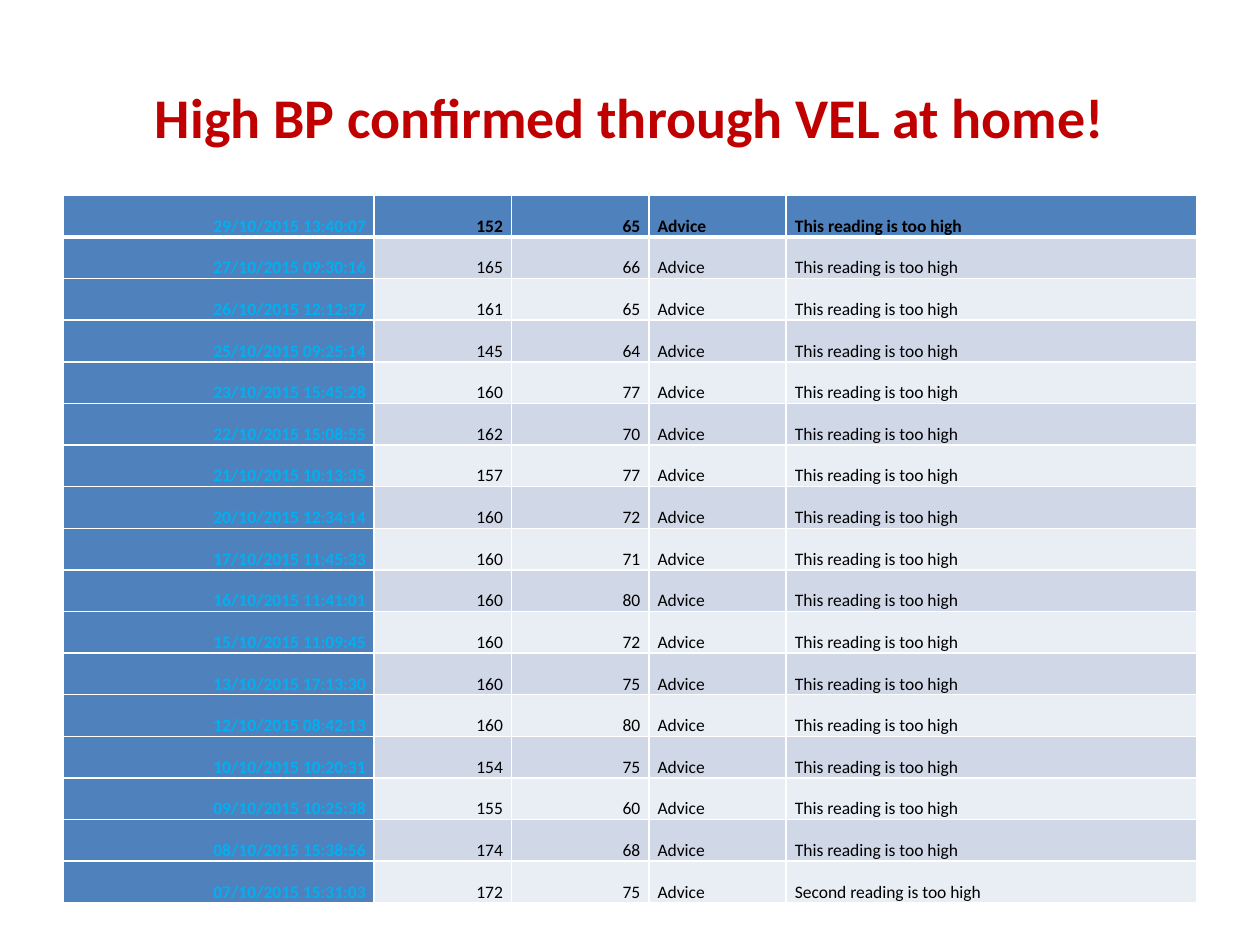
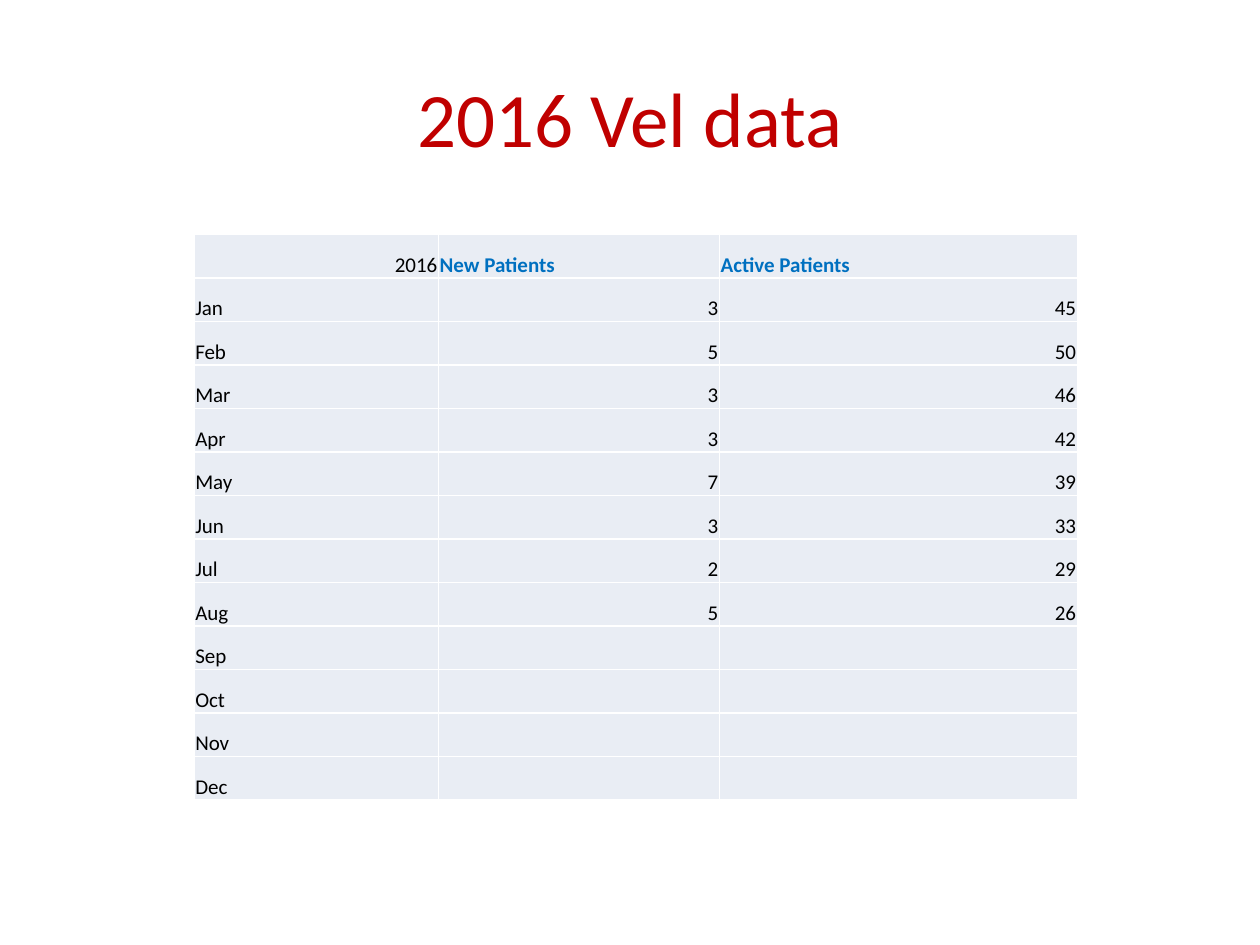
"""Build two slides of tables: home blood pressure readings and monthly patient counts."""
import pptx
import pptx.dml.color
import pptx.enum.text
import pptx.oxml.ns
import pptx.util
from lxml import etree

Pt = pptx.util.Pt
qn = pptx.oxml.ns.qn
RGB = pptx.dml.color.RGBColor.from_string
ALIGN = pptx.enum.text.PP_ALIGN
ANCHOR = pptx.enum.text.MSO_ANCHOR

THEME = {
    "font": "Calibri",
    "title": "C00000",
    "text": "000000",
    "date": "00B0F0",
    "heading": "0070C0",
    "strong": "4F81BD",
    "band": "D0D8E8",
    "pale": "E9EDF4",
    "grid": "FFFFFF",
    "thin": 1,
    "thick": 3,
}

READINGS = [
    ("29/10/2015 13:40:07", 152, 65),
    ("27/10/2015 09:30:16", 165, 66),
    ("26/10/2015 12:12:37", 161, 65),
    ("25/10/2015 09:25:14", 145, 64),
    ("23/10/2015 15:45:28", 160, 77),
    ("22/10/2015 15:08:55", 162, 70),
    ("21/10/2015 10:13:35", 157, 77),
    ("20/10/2015 12:34:14", 160, 72),
    ("17/10/2015 11:45:33", 160, 71),
    ("16/10/2015 11:41:01", 160, 80),
    ("15/10/2015 11:09:45", 160, 72),
    ("13/10/2015 17:13:30", 160, 75),
    ("12/10/2015 08:42:13", 160, 80),
    ("10/10/2015 10:20:31", 154, 75),
    ("09/10/2015 10:25:38", 155, 60),
    ("08/10/2015 15:38:56", 174, 68),
    ("07/10/2015 15:31:03", 172, 75),
]
ADVICE = ["This reading is too high"] * 16 + ["Second reading is too high"]

PATIENTS = [
    (2016, "New Patients", "Active Patients"),
    ("Jan", 3, 45),
    ("Feb", 5, 50),
    ("Mar", 3, 46),
    ("Apr", 3, 42),
    ("May", 7, 39),
    ("Jun", 3, 33),
    ("Jul", 2, 29),
    ("Aug", 5, 26),
    ("Sep", "", ""),
    ("Oct", "", ""),
    ("Nov", "", ""),
    ("Dec", "", ""),
]


def reading_look(row, column):
    """Return fill, text colour and weight for a cell of the readings table."""
    if row == 0 or column == 0:
        fill = THEME["strong"]
    else:
        fill = THEME["band"] if row % 2 else THEME["pale"]
    return fill, THEME["text" if column else "date"], row == 0 or column == 0


def patient_look(row, column):
    """Return fill, text colour and weight for a cell of the patients table."""
    heading = row == 0 and column > 0
    return THEME["pale"], THEME["heading" if heading else "text"], heading


SLIDES = [
    {
        "title": "High BP confirmed through VEL at home!",
        "title_size": 32,
        "title_bold": True,
        "rows": [(*reading, "Advice", advice) for reading, advice in zip(READINGS, ADVICE)],
        "look": reading_look,
        "origin": (36, 111.6),
        "columns": (177.8, 78.5, 78.5, 78.5, 234.7),
        "row_height": 23.8,
        "size": 10,
        "spacing": 1.15,
        "insets": (5, 0, 5, 0),
        "header_rule": THEME["thick"],
    },
    {
        "title": "2016 Vel data",
        "title_size": 44,
        "title_bold": False,
        "rows": PATIENTS,
        "look": patient_look,
        "origin": (110.9, 134),
        "columns": (139.7, 160.5, 204.5),
        "row_height": 24.87,
        "size": 12,
        "spacing": 1.0,
        "insets": (0.7, 0.7, 0.7, 0),
        "header_rule": THEME["thin"],
    },
]


def apply(target, formats):
    """Set each named format value on the target."""
    for name, value in formats.items():
        setattr(target, name, value)


def style_font(font, size, color, bold):
    """Give a font the theme face with a size, colour and weight."""
    apply(font, {"name": THEME["font"], "size": Pt(size), "bold": bold})
    font.color.rgb = RGB(color)


def add_borders(cell, widths):
    """Draw the left, right, top and bottom cell borders in the grid colour."""
    properties = cell._tc.get_or_add_tcPr()
    for place, (side, width) in enumerate(zip("LRTB", widths)):
        line = etree.Element(qn(f"a:ln{side}"), w=str(int(Pt(width))))
        fill = etree.SubElement(line, qn("a:solidFill"))
        etree.SubElement(fill, qn("a:srgbClr"), val=THEME["grid"])
        properties.insert(place, line)


def fill_cell(cell, value, look, content):
    """Write one value and format its cell."""
    fill, color, bold = look
    text = str(value)
    margins = zip(("margin_left", "margin_top", "margin_right", "margin_bottom"), content["insets"])
    apply(cell, {name: Pt(inset) for name, inset in margins})
    cell.vertical_anchor = ANCHOR.BOTTOM
    cell.fill.solid()
    cell.fill.fore_color.rgb = RGB(fill)
    paragraph = cell.text_frame.paragraphs[0]
    apply(paragraph, {
        "alignment": ALIGN.RIGHT if text[:1].isdigit() else ALIGN.LEFT,
        "line_spacing": content["spacing"],
    })
    if text:
        run = paragraph.add_run()
        run.text = text
        style_font(run.font, content["size"], color, bold)
    else:
        etree.SubElement(paragraph._p, qn("a:endParaRPr"), sz=str(content["size"] * 100))


def add_title(slide, content):
    """Place and format the slide title."""
    title = slide.shapes.title
    apply(title, {"left": Pt(36), "top": Pt(21.6), "width": Pt(648), "height": Pt(90)})
    title.text_frame.text = content["title"]
    title.text_frame.vertical_anchor = ANCHOR.MIDDLE
    paragraph = title.text_frame.paragraphs[0]
    paragraph.alignment = ALIGN.CENTER
    style_font(paragraph.runs[0].font, content["title_size"], THEME["title"], content["title_bold"])


def add_grid(slide, content):
    """Add the table of the slide and fill it row by row."""
    rows, columns = content["rows"], content["columns"]
    left, top = content["origin"]
    height = content["row_height"]
    grid = slide.shapes.add_table(
        len(rows), len(columns), Pt(left), Pt(top), Pt(sum(columns)), Pt(height * len(rows))
    ).table
    grid.horz_banding = False
    for column, width in zip(grid.columns, columns):
        column.width = Pt(width)
    thin = THEME["thin"]
    for row, values in enumerate(rows):
        grid.rows[row].height = Pt(height)
        above = content["header_rule"] if row == 1 else thin
        below = content["header_rule"] if row == 0 else thin
        for column, value in enumerate(values):
            cell = grid.cell(row, column)
            fill_cell(cell, value, content["look"](row, column), content)
            add_borders(cell, (thin, thin, above, below))


def main():
    """Build and save the presentation."""
    deck = pptx.Presentation()
    apply(deck, {"slide_width": Pt(720), "slide_height": Pt(540)})
    for content in SLIDES:
        slide = deck.slides.add_slide(deck.slide_layouts.get_by_name("Title Only"))
        add_title(slide, content)
        add_grid(slide, content)
    deck.save("out.pptx")


if __name__ == "__main__":
    main()
